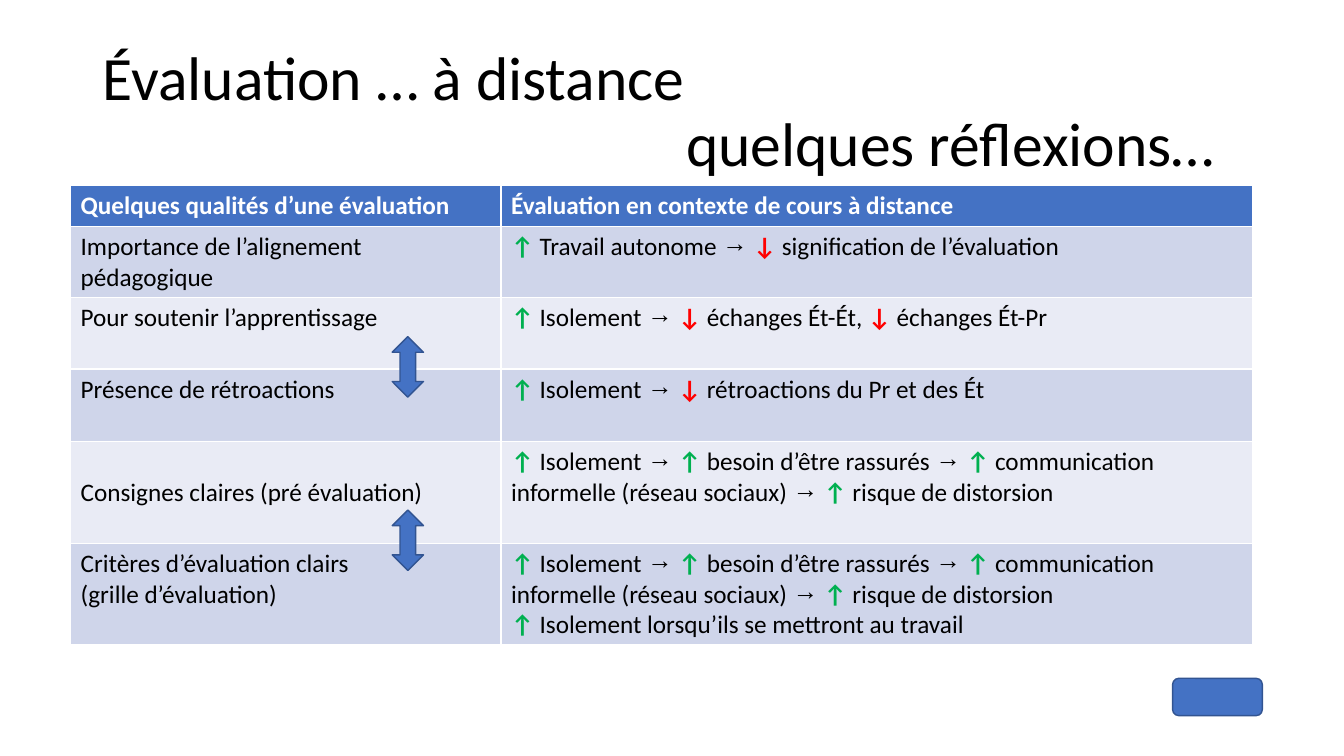
from dataclasses import dataclass
from itertools import groupby

from pptx import Presentation
from pptx.dml.color import RGBColor
from pptx.enum.shapes import MSO_SHAPE as Shape
from pptx.enum.text import MSO_ANCHOR as Anchor, PP_ALIGN as Align
from pptx.util import Inches, Pt


@dataclass(frozen=True)
class Theme:
    font: str = "Calibri"
    arrow_font: str = "Arial Narrow"
    title_size: int = 44
    table_size: int = 18
    black: str = "000000"
    white: str = "FFFFFF"
    blue: str = "4472C4"
    outline: str = "325491"
    green: str = "00B050"
    red: str = "FF0000"
    bands: tuple = ("CFD5EA", "E9EBF5")


THEME = Theme()
TREND_COLORS = {"↑": THEME.green, "↓": THEME.red}
TITLE = ("Évaluation … à distance", "quelques réflexions…")
HEADERS = (
    "Quelques qualités d’une évaluation",
    "Évaluation en contexte de cours à distance",
)
DISTORTION = (
    "↑ Isolement → ↑ besoin d’être rassurés → ↑ communication "
    "informelle (réseau sociaux) → ↑ risque de distorsion"
)
ROWS = (
    ("Importance de l’alignement pédagogique",
     "↑ Travail autonome → ↓ signification de l’évaluation"),
    ("Pour soutenir l’apprentissage",
     "↑ Isolement → ↓ échanges Ét-Ét, ↓ échanges Ét-Pr"),
    ("Présence de rétroactions",
     "↑ Isolement → ↓ rétroactions du Pr et des Ét"),
    ("Consignes claires (pré évaluation)", DISTORTION),
    ("Critères d’évaluation clairs\n(grille d’évaluation)",
     DISTORTION + "\n↑ Isolement lorsqu’ils se mettront au travail"),
)
COLUMN_WIDTHS = (4.27, 7.45)
ROW_HEIGHTS = (0.41, 0.7, 0.71, 0.72, 1.01, 1.01)
CENTERED_QUALITY_ROW = 4


def style_span(span, size, color, bold=False, font=THEME.font):
    span.font.name = font
    span.font.size = Pt(size)
    span.font.bold = bold
    span.font.color.rgb = RGBColor.from_string(color)


def arrow_kind(char):
    return char if char in "↑↓→" else ""


def write_line(para, line):
    for kind, chars in groupby(line, arrow_kind):
        span = para.add_run()
        span.text = "".join(chars)
        style_span(
            span,
            THEME.table_size,
            TREND_COLORS.get(kind, THEME.black),
            bold=kind in TREND_COLORS,
            font=THEME.arrow_font if kind == "→" else THEME.font,
        )


def fill_cell(cell, text, color):
    cell.fill.solid()
    cell.fill.fore_color.rgb = RGBColor.from_string(color)
    frame = cell.text_frame
    for index, line in enumerate(text.split("\n")):
        para = frame.add_paragraph() if index else frame.paragraphs[0]
        write_line(para, line)


def add_title(page, left, top, width, height):
    box = page.shapes.add_textbox(
        Inches(left), Inches(top), Inches(width), Inches(height))
    frame = box.text_frame
    frame.word_wrap = True
    frame.vertical_anchor = Anchor.MIDDLE
    frame.margin_right = Inches(0.37)
    frame.text = "\n".join(TITLE)
    for para, align in zip(frame.paragraphs, (Align.LEFT, Align.RIGHT)):
        para.alignment = align
        para.line_spacing = 0.9
        style_span(para.runs[0], THEME.title_size, THEME.black)


def add_quality_table(page, left, top):
    table = page.shapes.add_table(
        len(ROW_HEIGHTS), len(COLUMN_WIDTHS), Inches(left), Inches(top),
        Inches(sum(COLUMN_WIDTHS)), Inches(sum(ROW_HEIGHTS))).table
    for column, width in zip(table.columns, COLUMN_WIDTHS):
        column.width = Inches(width)
    for row, height in zip(table.rows, ROW_HEIGHTS):
        row.height = Inches(height)
    for cell, header in zip(table.rows[0].cells, HEADERS):
        fill_cell(cell, header, THEME.blue)
        style_span(cell.text_frame.paragraphs[0].runs[0],
                   THEME.table_size, THEME.white, bold=True)
    for index, texts in enumerate(ROWS):
        for cell, text in zip(table.rows[index + 1].cells, texts):
            fill_cell(cell, text, THEME.bands[index % 2])
    table.cell(CENTERED_QUALITY_ROW, 0).vertical_anchor = Anchor.MIDDLE


def add_blue_shape(page, kind, left, top, width, height):
    shape = page.shapes.add_shape(
        kind, Inches(left), Inches(top), Inches(width), Inches(height))
    shape.shadow.inherit = False
    shape.fill.solid()
    shape.fill.fore_color.rgb = RGBColor.from_string(THEME.blue)
    shape.line.color.rgb = RGBColor.from_string(THEME.outline)
    shape.line.width = Pt(1)


def build_reflection_slide(deck):
    page = deck.slides.add_slide(deck.slide_layouts[6])
    add_title(page, 0.92, 0.4, 11.5, 1.45)
    add_quality_table(page, 0.7, 1.84)
    for top in (5.06, 3.34):
        add_blue_shape(page, Shape.UP_DOWN_ARROW, 3.89, top, 0.31, 0.6)
    add_blue_shape(page, Shape.ROUNDED_RECTANGLE, 11.63, 6.73, 0.89, 0.37)


def main():
    deck = Presentation()
    deck.slide_width = Inches(13.33)
    deck.slide_height = Inches(7.5)
    build_reflection_slide(deck)
    deck.save("out.pptx")


if __name__ == "__main__":
    main()
